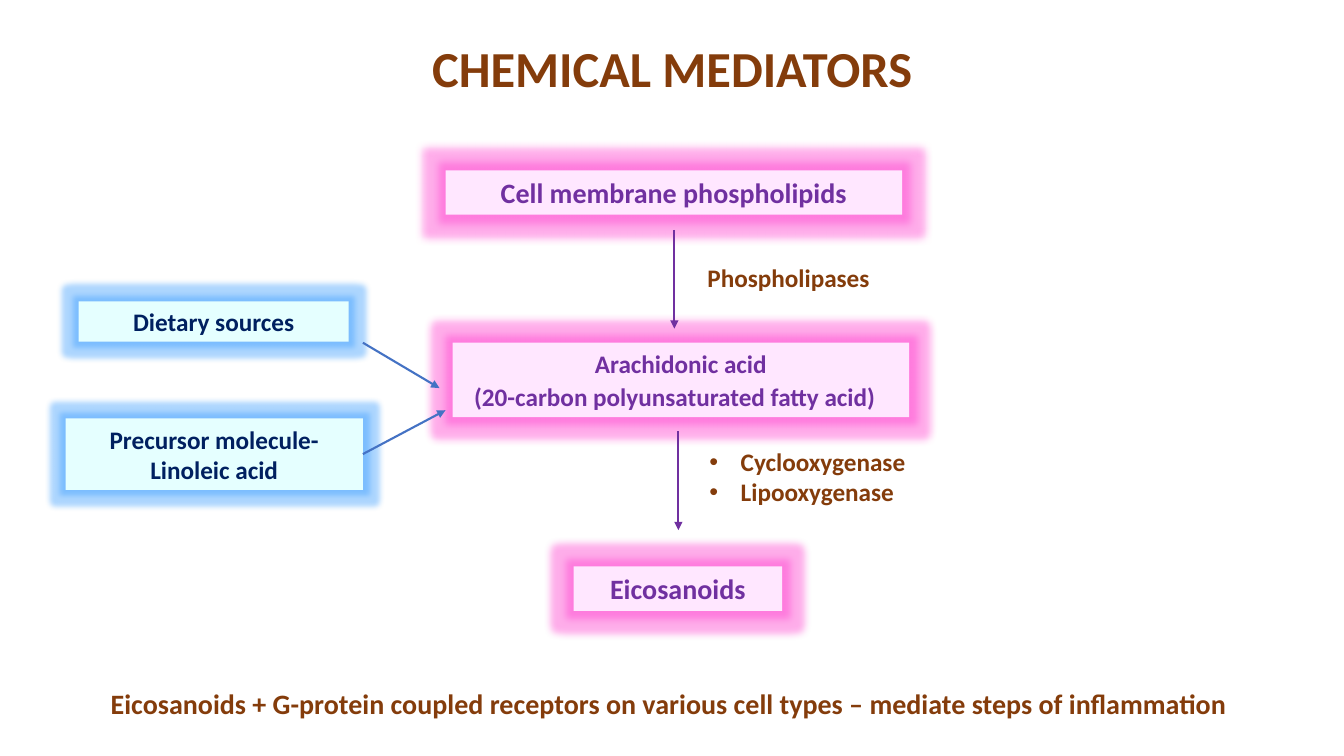
"""Builds a slide on the chemical mediators of inflammation."""
from lxml.etree import SubElement
from pptx import Presentation
from pptx.dml.color import RGBColor
from pptx.enum.shapes import MSO_CONNECTOR as Connector, MSO_SHAPE as Shape
from pptx.enum.text import MSO_ANCHOR as Anchor, MSO_AUTO_SIZE as AutoSize, PP_ALIGN as Align
from pptx.oxml.ns import qn
from pptx.util import Inches, Pt

CELL = 0.1
COLUMNS, ROWS = 133.33, 75
FONT = "Calibri"
BROWN = RGBColor(0x84, 0x3C, 0x0B)
PURPLE = RGBColor(0x70, 0x30, 0xA0)
NAVY = RGBColor(0x00, 0x20, 0x60)
BLUE = RGBColor(0x44, 0x72, 0xC4)
PINK_FILL = RGBColor(0xFF, 0xE7, 0xFF)
CYAN_FILL = RGBColor(0xE5, 0xFF, 0xFF)
PINK_GLOW = RGBColor(0xFF, 0x33, 0xCC)
BLUE_GLOW = RGBColor(0x33, 0x99, 0xFF)
PINK_STYLE = (PINK_FILL, PURPLE, PINK_GLOW, 11)
CYAN_STYLE = (CYAN_FILL, NAVY, BLUE_GLOW, 8)


def grid(*cells):
    """Turn grid cells into slide lengths."""
    return [Inches(cell * CELL) for cell in cells]


def write(shape, lines, size, color, align=Align.CENTER):
    """Fill a shape with bold lines of text."""
    frame = shape.text_frame
    frame.word_wrap = True
    frame.auto_size = AutoSize.SHAPE_TO_FIT_TEXT
    for index, line in enumerate(lines):
        para = frame.add_paragraph() if index else frame.paragraphs[0]
        para.text = line
        para.alignment = align
        para.font.name, para.font.size, para.font.bold = FONT, Pt(size), True
        para.font.color.rgb = color
    return frame


def add_label(page, place, lines, size, align=Align.CENTER):
    """Add brown text without a box."""
    return write(page.shapes.add_textbox(*grid(*place)), lines, size, BROWN, align)


def add_bullets(frame):
    """Give every paragraph a hanging round bullet."""
    indent = Inches(0.31)
    for para in frame.paragraphs:
        props = para._p.get_or_add_pPr()
        props.set("marL", str(indent))
        props.set("indent", str(-indent))
        SubElement(props, qn("a:buFont"), typeface="Arial")
        SubElement(props, qn("a:buChar"), char="•")


def add_glow_box(page, place, lines, size, style):
    """Add a filled rectangle with a soft glow around it."""
    fill, ink, glow, radius = style
    box = page.shapes.add_shape(Shape.RECTANGLE, *grid(*place))
    box.fill.solid()
    box.fill.fore_color.rgb = fill
    box.line.fill.background()
    box.shadow.inherit = False
    effects = box._element.spPr.find(qn("a:effectLst"))
    halo = SubElement(effects, qn("a:glow"), rad=str(Pt(radius)))
    tint = SubElement(halo, qn("a:srgbClr"), val=str(glow))
    SubElement(tint, qn("a:alpha"), val="40000")
    write(box, lines, size, ink)
    return box


def add_arrow(page, start, end, color):
    """Add a straight arrow between two grid points."""
    arrow = page.shapes.add_connector(Connector.STRAIGHT, *grid(*start, *end))
    arrow.line.color.rgb = color
    arrow.line.width = Pt(1.5)
    SubElement(arrow.line._get_or_add_ln(), qn("a:tailEnd"), type="triangle")
    SubElement(arrow._element.spPr, qn("a:effectLst"))
    return arrow


def main():
    """Build and save the slide."""
    deck = Presentation()
    deck.slide_width, deck.slide_height = grid(COLUMNS, ROWS)
    page = deck.slides.add_slide(deck.slide_layouts[6])

    title = add_label(page, (9.2, -0.2, 115, 14.5), ["CHEMICAL MEDIATORS"], 36)
    title.auto_size = AutoSize.NONE
    title.vertical_anchor = Anchor.MIDDLE
    title.paragraphs[0].line_spacing = 0.9

    add_glow_box(page, (44.2, 16.9, 45.3, 4.4), ["Cell membrane phospholipids"], 20, PINK_STYLE)
    acid = add_glow_box(page, (44.9, 34, 45.3, 7.4),
                        ["Arachidonic acid", "(20-carbon polyunsaturated fatty acid) "], 18, PINK_STYLE)
    span = acid.text_frame.paragraphs[1].add_run()
    span.text = " "
    span.font.size = Pt(20)
    add_glow_box(page, (56.9, 56.2, 20.7, 4.4), ["Eicosanoids"], 20, PINK_STYLE)
    add_glow_box(page, (7.8, 29.9, 26.8, 4), ["Dietary sources"], 18, CYAN_STYLE)
    precursor = add_glow_box(page, (6.5, 41.5, 29.5, 7.1),
                             ["Precursor molecule- Linoleic acid"], 18, CYAN_STYLE)

    add_label(page, (69.2, 25.5, 20.3, 4), ["Phospholipases"], 18, Align.LEFT)
    add_bullets(add_label(page, (69.4, 43.8, 24.4, 7.1),
                          ["Cyclooxygenase", "Lipooxygenase"], 18, Align.LEFT))
    add_label(page, (3, 67.6, 127.3, 4.4),
              ["Eicosanoids + G-protein coupled receptors on various cell types"
               " – mediate steps of inflammation "], 20)

    for column, row in ((66.9, 22.8), (67.3, 42.8)):
        add_arrow(page, (column, row), (column, row + 9.8), PURPLE)
    add_arrow(page, (36, 34), (43.6, 38.5), BLUE)
    add_arrow(page, (36, 45), (44.2, 40.7), BLUE).begin_connect(precursor, 3)

    deck.save("out.pptx")


if __name__ == "__main__":
    main()
